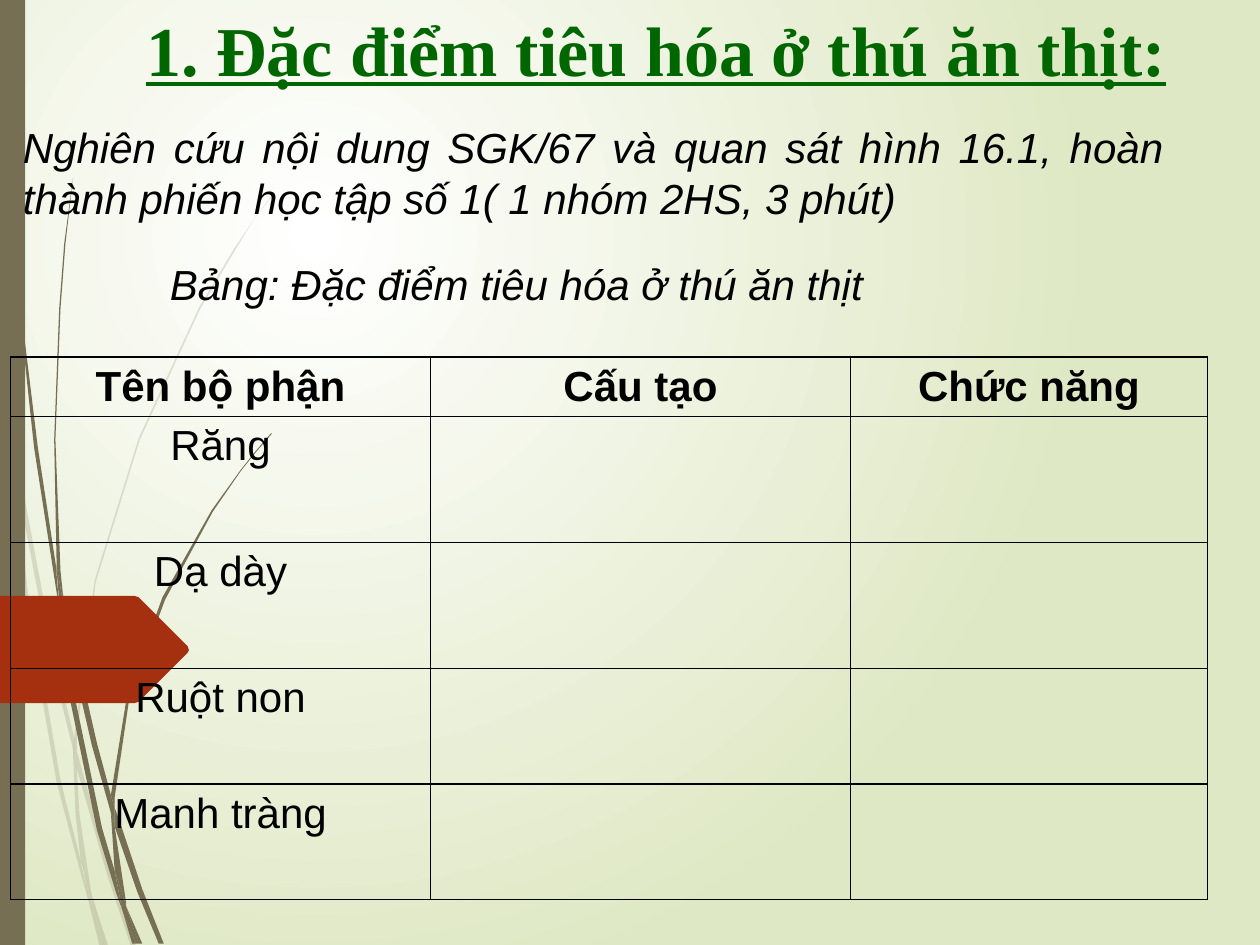
from lxml.etree import SubElement as Sub
from pptx import Presentation
from pptx.dml.color import RGBColor as RGB
from pptx.enum.shapes import MSO_SHAPE as Shape
from pptx.enum.text import MSO_ANCHOR as Anchor, MSO_AUTO_SIZE as AutoSize, PP_ALIGN as Align
from pptx.oxml.ns import qn
from pptx.util import Pt

COLORS = {"ink": "000000", "title": "006600", "stem": "766F54", "arrow": "A53010",
          "glow": "FFFFFF", "edge": "DFE8C4"}
UNIT = Pt(0.72)  # outlines are drawn on a grid of 100 steps to the inch

# Outlines of the grass blades, as knots on the grid
PALE_BLADES = [
    [(8, 350), (6, 322), (0, 282), (0, 299), (7, 344)],
    [(40, 522), (59, 599), (59, 586), (43, 520), (10, 345), (12, 376)],
    [(64, 607), (61, 596), (61, 610), (85, 694), (104, 751), (108, 751), (88, 692)],
    [(83, 751), (86, 751), (73, 711)],
    [(64, 683), (48, 619), (22, 469), (12, 376), (8, 350), (19, 470), (45, 621),
     (64, 693), (70, 714), (69, 707)],
    [(58, 599), (60, 646), (64, 683), (67, 692), (73, 711), (72, 706), (63, 646),
     (61, 610), (61, 608)],
    [(61, 584), (76, 462), (111, 349), (159, 245), (187, 198), (201, 175), (217, 154),
     (217, 153), (201, 175), (186, 197), (158, 244), (110, 348), (75, 461), (59, 584),
     (59, 586), (61, 596)],
    [(70, 714), (79, 751), (82, 751)],
    [(61, 608), (61, 610), (61, 596), (59, 586), (58, 599)],
    [(67, 692), (65, 683), (69, 707), (70, 714), (82, 751), (83, 751), (73, 711)],
]
DARK_BLADES = [
    [(5, 110), (14, 233), (27, 355), (46, 477), (47, 481), (45, 457), (45, 453),
     (30, 355), (15, 232), (6, 109), (4, 48), (3, 0), (2, 0), (3, 48)],
    [(73, 592), (88, 645), (88, 633), (88, 631), (77, 590), (50, 472), (53, 505)],
    [(94, 649), (91, 641), (91, 656), (109, 708), (126, 749), (130, 749), (113, 706)],
    [(91, 691), (81, 657), (60, 556), (53, 505), (47, 477), (56, 557), (77, 659),
     (92, 708), (97, 722), (96, 717)],
    [(50, 472), (48, 453), (44, 349), (48, 245), (52, 193), (58, 141), (51, 193),
     (47, 245), (43, 349), (45, 449), (49, 472)],
    [(110, 749), (113, 749), (100, 719)],
    [(47, 477), (53, 505), (50, 472), (49, 472), (45, 449), (45, 453)],
    [(91, 633), (103, 552), (131, 476), (169, 406), (191, 374), (203, 359), (216, 344),
     (215, 344), (203, 358), (191, 373), (168, 405), (129, 474), (101, 551), (88, 631),
     (91, 641)],
    [(97, 722), (105, 749), (108, 749)],
    [(88, 645), (91, 691), (96, 706), (100, 719), (100, 716), (91, 656), (90, 651)],
    [(88, 645), (90, 651), (91, 656), (91, 641), (88, 631), (88, 633)],
    [(96, 706), (91, 691), (96, 717), (97, 722), (108, 749), (110, 749), (100, 719)],
]
ARROW = [(-3, 473), (107, 473), (110, 474), (149, 513), (150, 515.5), (149, 518),
         (110, 557), (107, 558), (-3, 558)]

PARTS = ["Răng", "Dạ dày", "Ruột non", "Manh tràng"]


class LessonSlide:
    font, size = "Arial", 24

    def __init__(self, slide):
        self.slide = slide

    def background(self, inner, outer):
        fill = self.slide.background.fill
        fill.gradient()
        for stop, color in zip(fill.gradient_stops, (inner, outer)):
            stop.color.rgb = RGB.from_string(COLORS[color])
        gradient = self.slide._element.find(".//" + qn("a:gradFill"))
        gradient.remove(gradient.find(qn("a:lin")))
        circle = Sub(gradient, qn("a:path"), path="circle")
        Sub(circle, qn("a:fillToRect"), l="50000", t="50000", r="100000", b="100000")

    def paint(self, shape, color, opacity=100):
        shape.shadow.inherit = False
        shape.fill.solid()
        shape.fill.fore_color.rgb = RGB.from_string(COLORS[color])
        shape.line.fill.background()
        if opacity < 100:
            tint = shape._element.spPr.find(".//" + qn("a:srgbClr"))
            Sub(tint, qn("a:alpha"), val=str(opacity * 1000))

    def outline(self, knots, color, opacity=100):
        builder = self.slide.shapes.build_freeform(*knots[0], scale=float(UNIT))
        builder.add_line_segments(knots[1:], close=True)
        self.paint(builder.convert_to_shape(), color, opacity)

    def bar(self, x, y, w, h, color):
        bar = self.slide.shapes.add_shape(Shape.RECTANGLE, Pt(x), Pt(y), Pt(w), Pt(h))
        self.paint(bar, color)

    def add_words(self, frame, words, align, color="ink", font=None, size=None,
                  bold=False, italic=False, underline=False):
        paragraph = frame.paragraphs[0]
        paragraph.alignment = align
        run = paragraph.add_run()
        run.text = words
        run.font.name, run.font.size = font or self.font, Pt(size or self.size)
        run.font.color.rgb = RGB.from_string(COLORS[color])
        run.font.bold, run.font.italic, run.font.underline = bold, italic, underline

    def title(self, x, y, w, h, words):
        title = self.slide.shapes.title
        title.left, title.top, title.width, title.height = Pt(x), Pt(y), Pt(w), Pt(h)
        frame = title.text_frame
        frame.auto_size, frame.vertical_anchor = AutoSize.NONE, Anchor.TOP
        self.add_words(frame, words, Align.CENTER, "title", "Times New Roman", 40,
                       bold=True, underline=True)

    def text(self, x, y, w, h, words, align):
        frame = self.slide.shapes.add_textbox(Pt(x), Pt(y), Pt(w), Pt(h)).text_frame
        frame.word_wrap = True
        self.add_words(frame, words, align, italic=True)

    def table(self, x, y, widths, heights, rows):
        table = self.slide.shapes.add_table(len(heights), len(widths), Pt(x), Pt(y),
                                            Pt(sum(widths)), Pt(sum(heights))).table
        table.first_row = table.horz_banding = False
        for column, width in zip(table.columns, widths):
            column.width = Pt(width)
        for row, height in zip(table.rows, heights):
            row.height = Pt(height)
        for r, row in enumerate(rows):
            for c, words in enumerate(row):
                cell = table.cell(r, c)
                self.border(cell)
                cell.fill.background()
                if words:
                    self.add_words(cell.text_frame, words, Align.CENTER, bold=r == 0)

    def border(self, cell):
        for side in ("lnL", "lnR", "lnT", "lnB"):
            line = Sub(cell._tc.get_or_add_tcPr(), qn("a:" + side), w=str(Pt(1)))
            Sub(Sub(line, qn("a:solidFill")), qn("a:srgbClr"), val=COLORS["ink"])


def main():
    deck = Presentation()
    deck.slide_width, deck.slide_height = Pt(720), Pt(540)
    lesson = LessonSlide(deck.slides.add_slide(deck.slide_layouts[5]))

    # Backdrop: grass, side bar and arrow
    lesson.background("glow", "edge")
    for blade in PALE_BLADES:
        lesson.outline(blade, "stem", 20)
    for blade in DARK_BLADES:
        lesson.outline(blade, "stem")
    lesson.bar(0, 0, 14.4, 540, "stem")
    lesson.outline(ARROW, "arrow")

    # Table to fill in
    header = ["Tên bộ phận", "Cấu tạo", "Chức năng"]
    lesson.table(6, 204, [240, 240, 204], [31.5, 72, 72, 66, 66],
                 [header] + [[part, "", ""] for part in PARTS])

    # Title, task and table caption
    lesson.title(54, 0, 642, 55.5, "1. Đặc điểm tiêu hóa ở thú ăn thịt:")
    lesson.text(6, 66, 666, 65.5, "Nghiên cứu nội dung SGK/67 và quan sát hình 16.1, "
                "hoàn thành phiến học tập số 1( 1 nhóm 2HS, 3 phút)", Align.JUSTIFY)
    lesson.text(90, 144, 456, 36, "Bảng: Đặc điểm tiêu hóa ở thú ăn thịt", Align.LEFT)

    deck.save("out.pptx")


if __name__ == "__main__":
    main()
